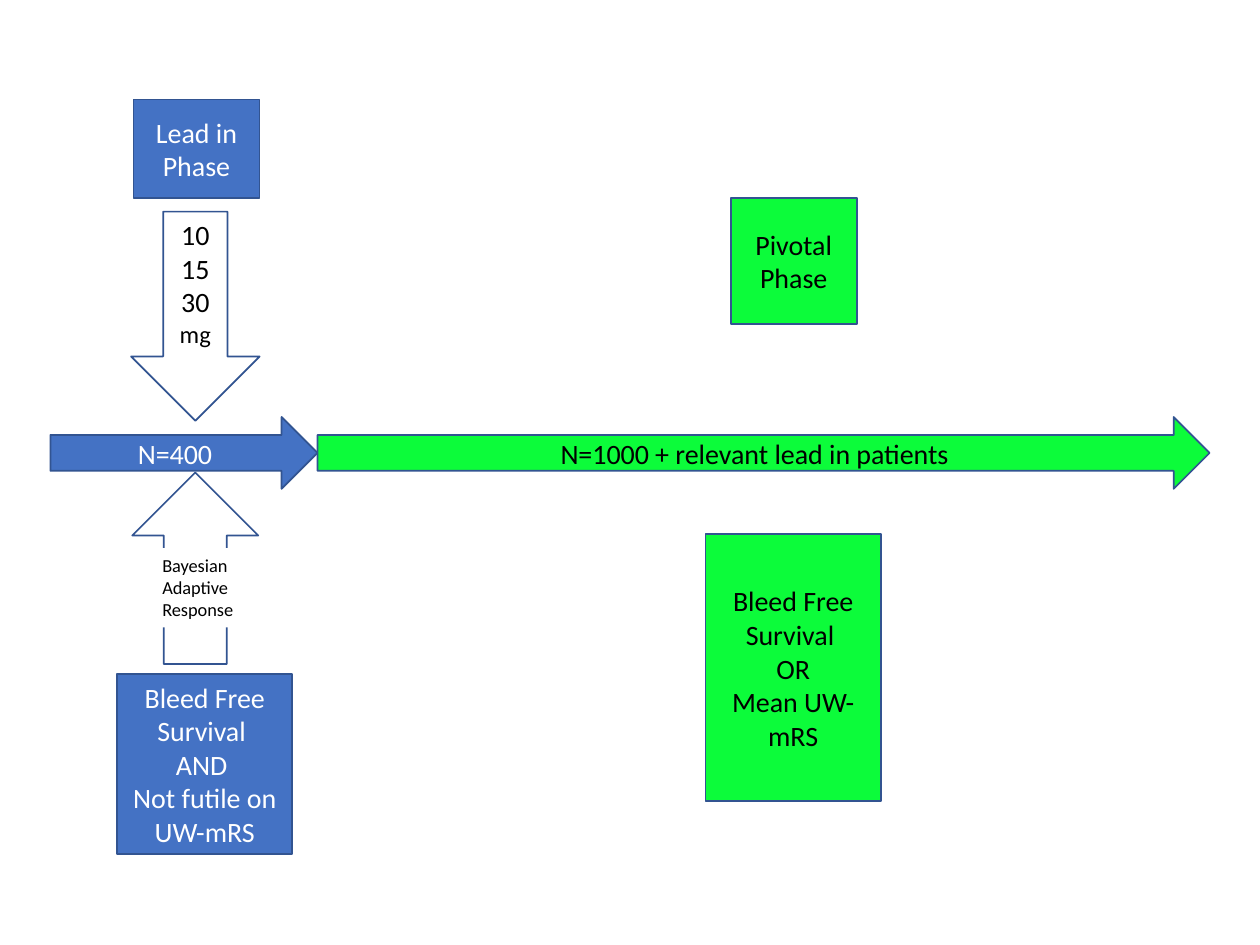
from dataclasses import dataclass

from pptx import Presentation
from pptx.dml.color import RGBColor
from pptx.enum.shapes import MSO_SHAPE as Preset
from pptx.enum.text import MSO_ANCHOR as Anchor, PP_ALIGN as Align
from pptx.shapes.autoshape import Shape
from pptx.slide import Slide
from pptx.util import Inches, Pt

COLORS = {
    "blue": "4472C4",
    "green": "0CFC3A",
    "outline": "325491",
    "white": "FFFFFF",
    "black": "000000",
}


@dataclass(frozen=True)
class Block:
    """A preset shape of the trial diagram with its text and style."""

    preset: Preset
    left: float
    top: float
    width: float
    height: float
    lines: tuple[str, ...] = ()
    fill: str | None = None
    text_color: str = "black"
    size: float = 16
    outlined: bool = True
    align: Align = Align.CENTER
    anchor: Anchor = Anchor.MIDDLE


LEAD_IN_BLOCKS = (
    Block(Preset.RIGHT_ARROW, 0.4, 3.31, 2.12, 0.57, ("N=400",), "blue", "white"),
    Block(Preset.RECTANGLE, 1.06, 0.79, 1, 0.78, ("Lead in Phase",), "blue", "white"),
    Block(Preset.RECTANGLE, 0.93, 5.35, 1.39, 1.43,
          ("Bleed Free Survival ", "AND ", "Not futile on UW-mRS"), "blue", "white"),
    Block(Preset.UP_ARROW, 1.05, 3.75, 1, 1.52),
    Block(Preset.RECTANGLE, 1.19, 4.35, 1, 0.63, ("Bayesian", "Adaptive", "Response"),
          "white", size=10.5, outlined=False, align=Align.LEFT, anchor=Anchor.TOP),
)
PIVOTAL_BLOCKS = (
    Block(Preset.RIGHT_ARROW, 2.52, 3.31, 7.08, 0.57,
          ("N=1000 + relevant lead in patients",), "green"),
    Block(Preset.RECTANGLE, 5.8, 1.57, 1, 1, ("Pivotal Phase",), "green"),
    Block(Preset.RECTANGLE, 5.6, 4.24, 1.39, 2.12,
          ("Bleed Free Survival ", "OR", "Mean UW-mRS"), "green"),
)
DOSE_ARROW = Block(Preset.DOWN_ARROW, 1.04, 1.68, 1.02, 1.66, ("10", "15", "30"),
                   anchor=Anchor.TOP)


def color(name: str) -> RGBColor:
    """Look up a palette colour."""
    return RGBColor.from_string(COLORS[name])


def write_lines(shape: Shape, block: Block) -> None:
    """Fill a shape with one paragraph per line."""
    frame = shape.text_frame
    frame.word_wrap = True
    frame.vertical_anchor = block.anchor
    frame.text = "\n".join(block.lines)
    for paragraph in frame.paragraphs:
        paragraph.alignment = block.align
        paragraph.font.name = "Calibri"
        paragraph.font.size = Pt(block.size)
        paragraph.font.color.rgb = color(block.text_color)


def draw_block(slide: Slide, block: Block) -> Shape:
    """Draw one block and return its shape."""
    shape = slide.shapes.add_shape(
        block.preset, Inches(block.left), Inches(block.top),
        Inches(block.width), Inches(block.height))
    shape.shadow.inherit = False
    if block.fill:
        shape.fill.solid()
        shape.fill.fore_color.rgb = color(block.fill)
    else:
        shape.fill.background()
    if block.outlined:
        shape.line.color.rgb = color("outline")
        shape.line.width = Pt(1)
    else:
        shape.line.fill.background()
    if block.lines:
        write_lines(shape, block)
    return shape


def main() -> None:
    """Build the trial design slide."""
    presentation = Presentation()
    presentation.slide_width = Inches(10)
    presentation.slide_height = Inches(7.5)
    slide = presentation.slides.add_slide(presentation.slide_layouts[6])
    for block in LEAD_IN_BLOCKS + PIVOTAL_BLOCKS:
        draw_block(slide, block)
    dose_arrow = draw_block(slide, DOSE_ARROW)
    unit = dose_arrow.text_frame.paragraphs[-1].add_run()
    unit.text = "mg"
    unit.font.size = Pt(14)
    presentation.save("out.pptx")


if __name__ == "__main__":
    main()
